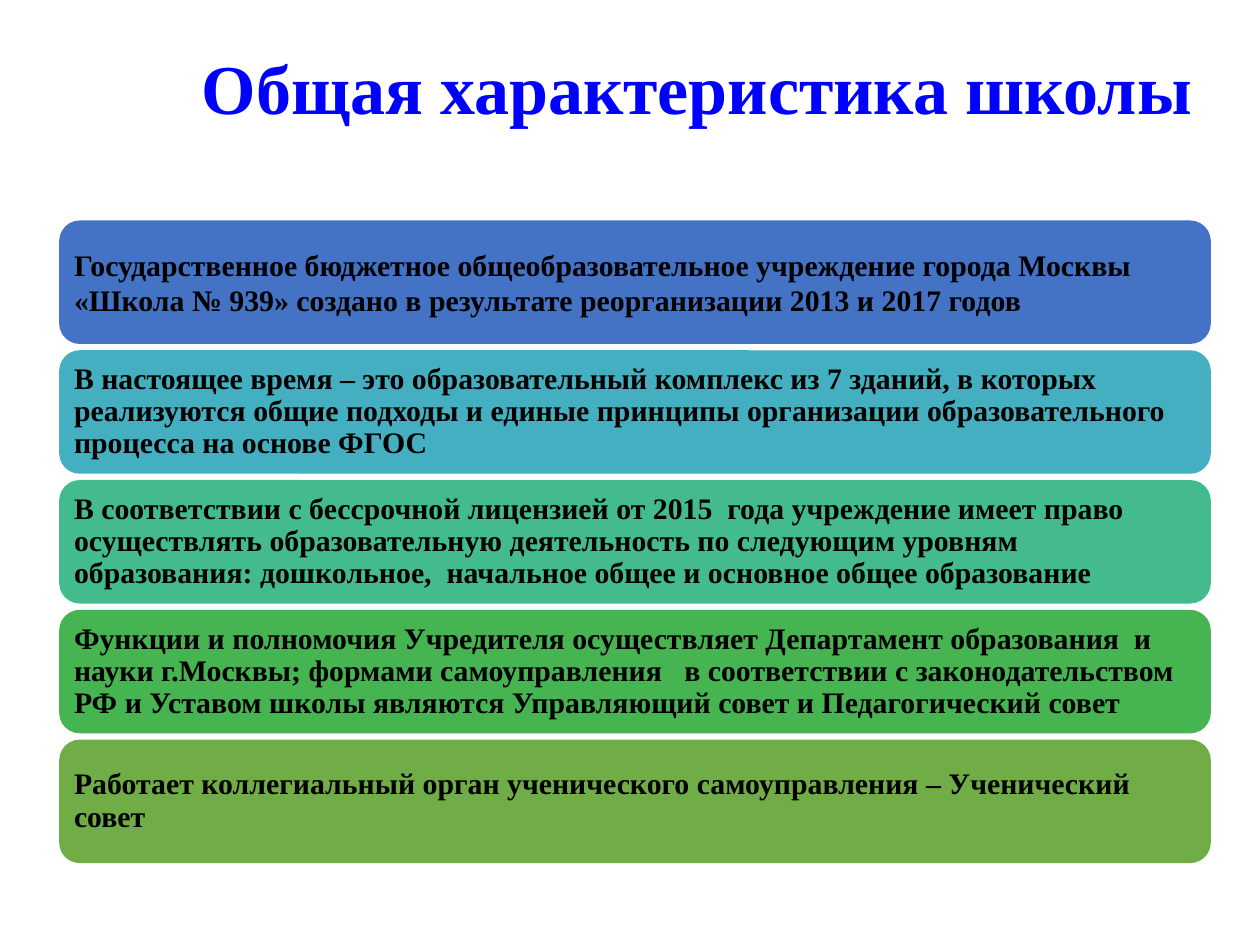
from pptx import Presentation
from pptx.dml.color import RGBColor
from pptx.enum import shapes, text
from pptx.util import Inches, Pt

FONT = "Times New Roman"
BLUE = RGBColor(0x00, 0x00, 0xFF)
BLACK = RGBColor(0x00, 0x00, 0x00)
AZURE = RGBColor(0x44, 0x72, 0xC4)
TEAL = RGBColor(0x43, 0xAF, 0xC0)
MINT = RGBColor(0x43, 0xBB, 0x8D)
GREEN = RGBColor(0x45, 0xB4, 0x51)
OLIVE = RGBColor(0x70, 0xAD, 0x47)

FACTS = [
    (AZURE, 1.0, "Государственное бюджетное общеобразовательное учреждение города Москвы "
     "«Школа № 939» создано в результате реорганизации 2013 и 2017 годов"),
    (TEAL, 0.9, "В настоящее время – это образовательный комплекс из 7 зданий, в которых "
     "реализуются общие подходы и единые принципы организации образовательного "
     "процесса на основе ФГОС"),
    (MINT, 0.9, "В соответствии с бессрочной лицензией от 2015  года учреждение имеет право "
     "осуществлять образовательную деятельность по следующим уровням "
     "образования: дошкольное,  начальное общее и основное общее образование"),
    (GREEN, 0.9, "Функции и полномочия Учредителя осуществляет Департамент образования  и "
     "науки г.Москвы; формами самоуправления   в соответствии с законодательством "
     "РФ и Уставом школы являются Управляющий совет и Педагогический совет"),
    (OLIVE, 0.9, "Работает коллегиальный орган ученического самоуправления – Ученический совет"),
]


def write(frame, words, size, color, align, space):
    frame.word_wrap = True
    frame.auto_size = text.MSO_AUTO_SIZE.NONE
    frame.vertical_anchor = text.MSO_ANCHOR.MIDDLE
    frame.text = words
    para = frame.paragraphs[0]
    para.alignment = align
    para.line_spacing = space
    font = para.font
    font.name, font.size, font.bold = FONT, Pt(size), True
    font.color.rgb = color


def add_title(slide, left, top, width, height):
    title = slide.shapes.title
    title.left, title.top = left, top
    title.width, title.height = width, height
    write(title.text_frame, "Общая характеристика школы", 40, BLUE,
          text.PP_ALIGN.CENTER, 0.9)


def add_facts(slide, left, top, width, height, gap):
    count = len(FACTS)
    tall = (height - gap * (count - 1)) // count
    for row, (fill, space, words) in enumerate(FACTS):
        bar = slide.shapes.add_shape(
            shapes.MSO_SHAPE.ROUNDED_RECTANGLE,
            left, top + row * (tall + gap), width, tall)
        bar.shadow.inherit = False
        bar.fill.solid()
        bar.fill.fore_color.rgb = fill
        bar.line.fill.background()
        frame = bar.text_frame
        frame.margin_left = frame.margin_right = Inches(0.07)
        frame.margin_top = frame.margin_bottom = Inches(0.07)
        write(frame, words, 17, BLACK, text.PP_ALIGN.LEFT, space)


def main():
    deck = Presentation()
    deck.slide_width, deck.slide_height = Inches(10), Inches(7.5)
    slide = deck.slides.add_slide(deck.slide_layouts[5])
    add_title(slide, Inches(1.06), Inches(0), Inches(8.94), Inches(1.46))
    add_facts(slide, Inches(0.47), Inches(1.75), Inches(9.14), Inches(5.1), Inches(0.05))
    deck.save("out.pptx")


if __name__ == "__main__":
    main()
